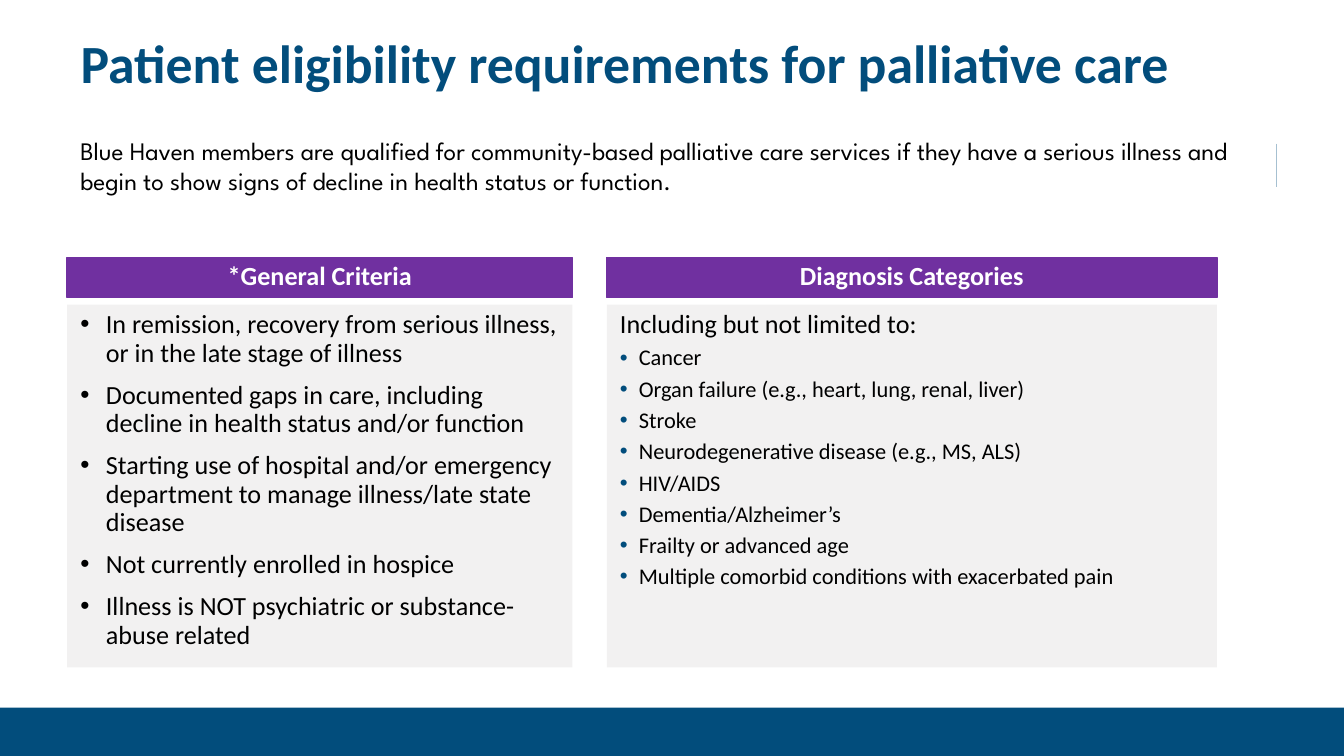
from lxml import etree
from pptx import Presentation, util as u
from pptx.dml.color import RGBColor
from pptx.enum import shapes, text
from pptx.oxml.ns import qn

NAVY = RGBColor(0x02, 0x4D, 0x7C)
PURPLE = RGBColor(0x70, 0x30, 0xA0)
GRAY = RGBColor(0xF2, 0xF1, 0xF1)
WHITE = RGBColor(0xFF, 0xFF, 0xFF)
BLACK = RGBColor(0, 0, 0)

prs = Presentation()
prs.slide_width = u.Inches(10)
prs.slide_height = prs.slide_width * 9 // 16
s = prs.slides.add_slide(prs.slide_layouts[5])

COL = prs.slide_width / 100
ROW = prs.slide_height / 100
MARGIN, FULL = 5, 90


def add_box(x, y, w, h, fill, line=None, anchor=text.MSO_ANCHOR.TOP):
    sp = s.shapes.add_shape(shapes.MSO_SHAPE.RECTANGLE, int(x * COL), int(y * ROW),
                            int(w * COL), int(h * ROW))
    sp.shadow.inherit = False
    sp.fill.solid()
    sp.fill.fore_color.rgb = fill
    if line is None:
        sp.line.fill.background()
    else:
        sp.line.color.rgb = line
        sp.line.width = u.Pt(0.75)
    sp.text_frame.word_wrap = True
    sp.text_frame.vertical_anchor = anchor
    return sp


def add_text(tf, words, size, color, before=0, spacing=0.9, indent=0, bullet_color=None,
             bold=False, font="Calibri", align=text.PP_ALIGN.LEFT):
    first = not tf.paragraphs[0].runs
    p = tf.paragraphs[0] if first else tf.add_paragraph()
    p.alignment = align
    p.line_spacing = spacing
    p.space_before = u.Pt(0 if first else before)
    if indent:
        pPr = p._p.get_or_add_pPr()
        pPr.set("marL", str(u.Inches(indent)))
        pPr.set("indent", str(-u.Inches(indent)))
        clr = etree.SubElement(pPr, qn("a:buClr"))
        etree.SubElement(clr, qn("a:srgbClr")).set("val", str(bullet_color))
        etree.SubElement(pPr, qn("a:buFont")).set("typeface", "Arial")
        etree.SubElement(pPr, qn("a:buChar")).set("char", "•")
    r = p.add_run()
    r.text = words
    r.font.name = font
    r.font.size = u.Pt(size)
    r.font.bold = bold
    r.font.color.rgb = color


add_box(0, 93.6, 100, 6.4, NAVY)

rule_x = int((MARGIN + FULL) * COL)
rule = s.shapes.add_connector(shapes.MSO_CONNECTOR.STRAIGHT, rule_x, int(19 * ROW),
                              rule_x, int(24.7 * ROW))
rule.line.color.rgb = NAVY
rule.line.width = u.Pt(0.5)
etree.SubElement(rule._element.spPr, qn("a:effectLst"))

title = s.shapes.title
title.left, title.top = int(MARGIN * COL), int(4 * ROW)
title.width, title.height = int(FULL * COL), int(13 * ROW)
title.text_frame.word_wrap = True
title.text_frame.auto_size = text.MSO_AUTO_SIZE.NONE
title.text_frame.vertical_anchor = text.MSO_ANCHOR.TOP
add_text(title.text_frame, "Patient eligibility requirements for palliative care",
         28.8, NAVY, bold=True)

intro = add_box(MARGIN, 16.9, FULL, 10, WHITE, anchor=text.MSO_ANCHOR.MIDDLE)
add_text(intro.text_frame,
         "Blue Haven members are qualified for community-based palliative care services "
         "if they have a serious illness and begin to show signs of decline in health "
         "status or function.", 13.5, BLACK, spacing=1.0, font="League Spartan")

criteria = [
    "In remission, recovery from serious illness, or in the late stage of illness",
    "Documented gaps in care, including decline in health status and/or function",
    "Starting use of hospital and/or emergency department to manage illness/late state disease",
    "Not currently enrolled in hospice",
    "Illness is NOT psychiatric or substance-abuse related",
]
diagnoses = [
    "Cancer",
    "Organ failure (e.g., heart, lung, renal, liver)",
    "Stroke",
    "Neurodegenerative disease (e.g., MS, ALS)",
    "HIV/AIDS",
    "Dementia/Alzheimer’s",
    "Frailty or advanced age",
    "Multiple comorbid conditions with exacerbated pain",
]
panels = [
    (MARGIN, 37.6, "*General Criteria", None, criteria, 14, 7.5, 0.19, BLACK),
    (45.15, 45.4, "Diagnosis Categories", "Including but not limited to:",
     diagnoses, 12, 3.8, 0.14, NAVY),
]
for x, w, heading, lead, items, size, before, indent, bullet_color in panels:
    header = add_box(x, 34.1, w, 5.3, PURPLE, PURPLE, text.MSO_ANCHOR.MIDDLE)
    add_text(header.text_frame, heading, 14, WHITE, spacing=0.8, bold=True,
             align=text.PP_ALIGN.CENTER)
    body = add_box(x, 40.3, w, 48, GRAY)
    if lead:
        add_text(body.text_frame, lead, 14, BLACK)
    for item in items:
        add_text(body.text_frame, item, size, BLACK, before, indent=indent,
                 bullet_color=bullet_color)

prs.save("out.pptx")
